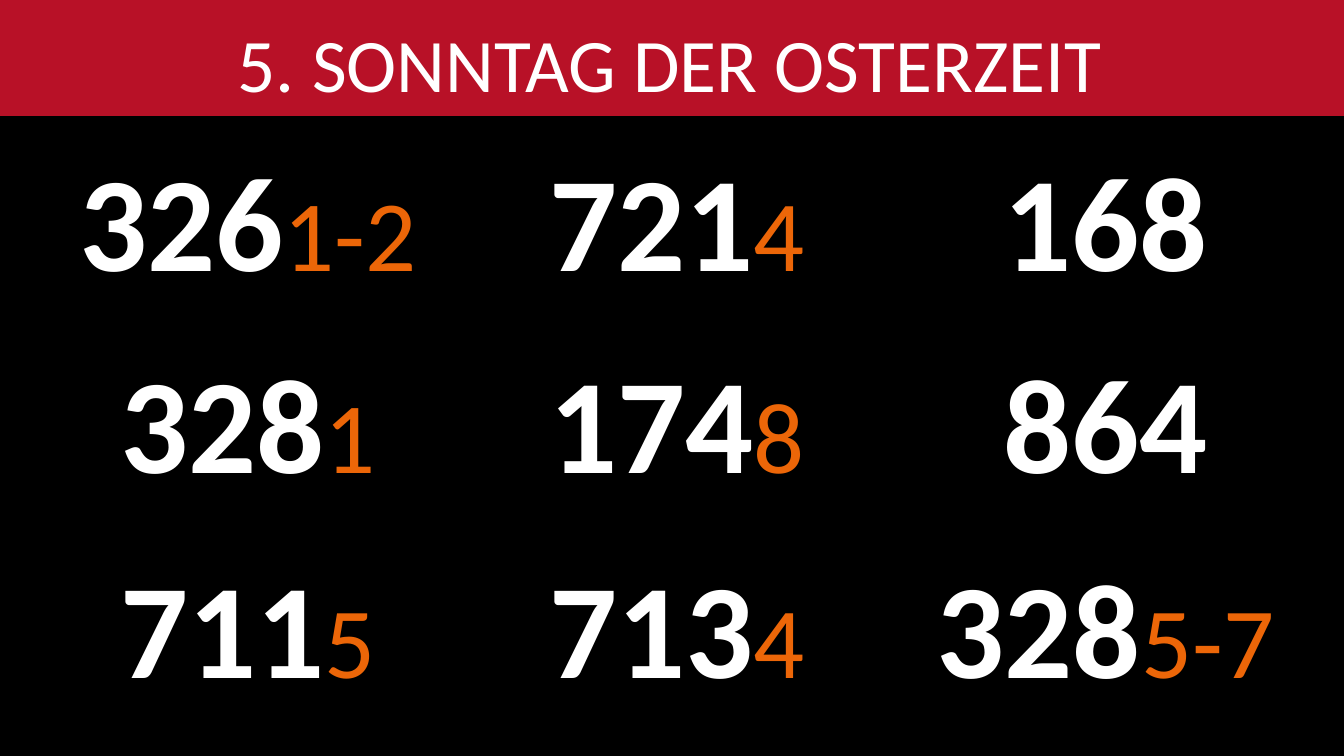
"""Hymn board slide for the fifth Sunday of Easter."""
import lxml.etree
import pptx
import pptx.dml.color
import pptx.enum.shapes
import pptx.enum.text
import pptx.oxml.ns
import pptx.util

PX = 914400 / 100.8
FONT = "Calibri"
COLORS = {"background": "000000", "band": "B81127", "text": "FFFFFF", "verse": "EC6608"}
ROW_HEIGHTS = [202, 205, 200, 200]
HYMNS = [
    [("326", "1-2"), ("721", "4"), ("168", "")],
    [("328", "1"), ("174", "8"), ("864", "")],
    [("711", "5"), ("713", "4"), ("328", "5-7")],
    [("", ""), ("", ""), ("", "")],
]


def px(*lengths):
    return [pptx.util.Emu(round(length * PX)) for length in lengths]


def rgb(name):
    return pptx.dml.color.RGBColor.from_string(COLORS[name])


def style_font(font, size, color, bold=False):
    font.name = FONT
    font.size = pptx.util.Pt(size)
    font.bold = bold
    font.color.rgb = rgb(color)


def add_header(slide, left, top, width, height):
    band = slide.shapes.add_shape(
        pptx.enum.shapes.MSO_SHAPE.RECTANGLE, *px(left, top, width, height))
    band.shadow.inherit = False
    band.fill.solid()
    band.fill.fore_color.rgb = rgb("band")
    band.line.fill.background()

    title = slide.shapes.add_textbox(*px(left + 17, top + 12, width - 38, height - 14))
    tf = title.text_frame
    tf.word_wrap = True
    p = tf.paragraphs[0]
    p.text = "5. SONNTAG DER OSTERZEIT"
    p.alignment = pptx.enum.text.PP_ALIGN.CENTER
    style_font(p.font, 54, "text")


def clear_cell(cell):
    tc_pr = cell._tc.get_or_add_tcPr()
    for side in ("a:lnL", "a:lnR", "a:lnT", "a:lnB"):
        line = lxml.etree.SubElement(tc_pr, pptx.oxml.ns.qn(side))
        lxml.etree.SubElement(line, pptx.oxml.ns.qn("a:noFill"))
    cell.fill.background()


def fill_cell(cell, hymn, verses):
    p = cell.text_frame.paragraphs[0]
    p.alignment = pptx.enum.text.PP_ALIGN.CENTER
    for text, size, color, bold in (
            (hymn, 96, "text", True), (verses, 72, "verse", False)):
        if text:
            r = p.add_run()
            r.text = text
            style_font(r.font, size, color, bold)


def add_hymn_table(slide, left, top, width):
    frame = slide.shapes.add_table(
        len(HYMNS), len(HYMNS[0]), *px(left, top, width, sum(ROW_HEIGHTS)))
    table = frame.table
    table.first_row = False
    table.horz_banding = False
    for row, height, hymns in zip(table.rows, ROW_HEIGHTS, HYMNS):
        row.height = px(height)[0]
        for cell, (hymn, verses) in zip(row.cells, hymns):
            clear_cell(cell)
            fill_cell(cell, hymn, verses)


def main():
    prs = pptx.Presentation()
    prs.slide_width, prs.slide_height = px(1344, 756)
    slide = prs.slides.add_slide(prs.slide_layouts[6])
    slide.background.fill.solid()
    slide.background.fill.fore_color.rgb = rgb("background")
    add_hymn_table(slide, 34, 138, 1286)
    add_header(slide, 0, 0, 1344, 116)
    prs.save("out.pptx")


if __name__ == "__main__":
    main()
